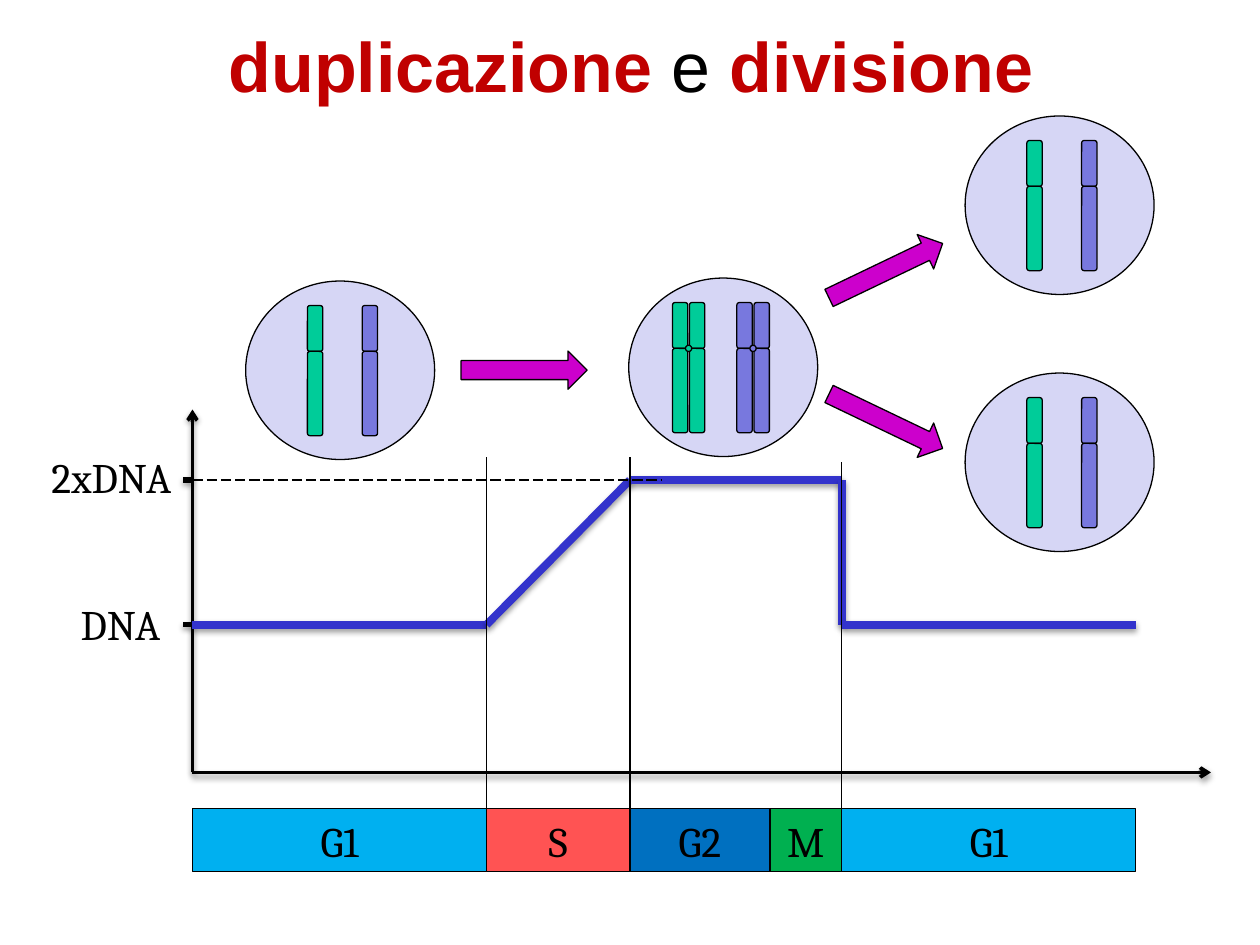
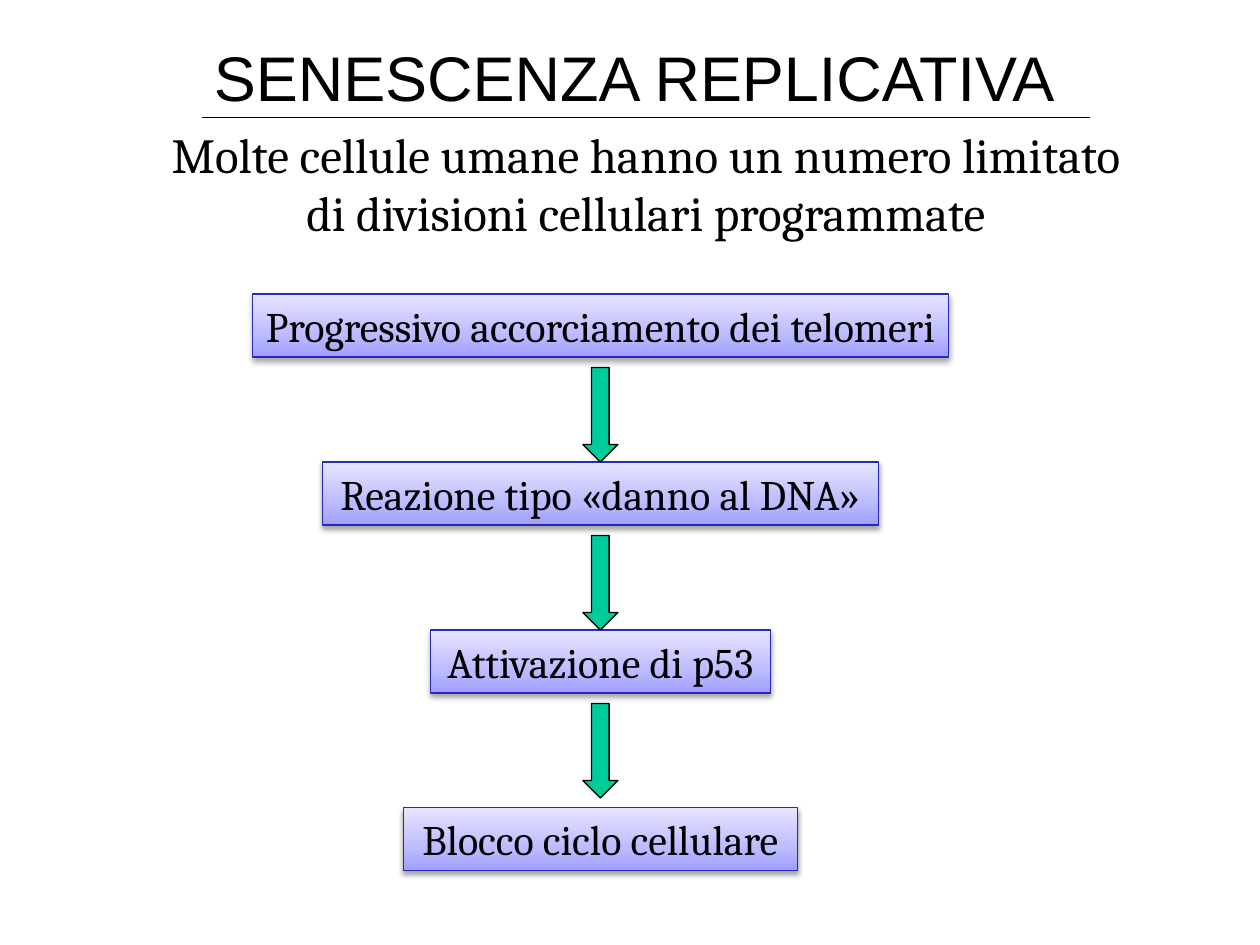
from dataclasses import dataclass
from itertools import pairwise

from pptx import Presentation
from pptx.dml.color import RGBColor as RGB
from pptx.enum.dml import MSO_LINE
from pptx.enum.shapes import MSO_CONNECTOR, MSO_SHAPE as SHP
from pptx.enum.text import MSO_ANCHOR, PP_ALIGN
from pptx.oxml import parse_xml
from pptx.oxml.ns import nsdecls, qn
from pptx.util import Pt


@dataclass(frozen=True)
class Theme:
    black: str = "000000"
    red: str = "C00000"
    curve: str = "3333CC"
    cell: str = "D6D6F5"
    green: str = "00CC99"
    violet: str = "7878DE"
    magenta: str = "CC00CC"
    g1: str = "00B0F0"
    s: str = "FF5353"
    g2: str = "0070C0"
    m: str = "00B050"
    box_line: str = "2929B8"
    box_stops: tuple = ((0, "9F9FFF"), (35, "BBBBFF"), (100, "E5E5FF"))
    head: str = "Arial"
    body: str = "Cambria"
    big: int = 40
    title: int = 36
    lead: int = 28
    label: int = 24
    hair: float = 0.75


T = Theme()
NS = nsdecls("a")
SHADOW = (f'<a:effectLst {NS}><a:outerShdw blurRad="40000" dist="22000" dir="5400000" '
          'rotWithShape="0"><a:srgbClr val="000000"><a:alpha val="36000"/></a:srgbClr>'
          '</a:outerShdw></a:effectLst>')
STOPS = "".join(f'<a:gs pos="{pos * 1000}"><a:srgbClr val="{c}"/></a:gs>' for pos, c in T.box_stops)
GRADIENT = (f'<a:gradFill {NS} rotWithShape="1"><a:gsLst>{STOPS}</a:gsLst>'
            '<a:lin ang="16200000" scaled="0"/></a:gradFill>')


def add_box(shapes, kind, box, fill=None, text=(), size=T.label, font=T.body, wrap=False):
    """Add a preset shape, or a text box if kind is None; text is (words, colour, bold) runs."""
    pos = [Pt(v) for v in box]
    sp = shapes.add_shape(kind, *pos) if kind else shapes.add_textbox(*pos)
    if kind:
        sp.line.width = Pt(T.hair)
        if fill == "gradient":
            sp.line.color.rgb = RGB.from_string(T.box_line)
            sp.fill.background()
            pr = sp.element.spPr
            pr.replace(pr.find(qn("a:noFill")), parse_xml(GRADIENT))
            pr.append(parse_xml(SHADOW))
        else:
            sp.line.color.rgb = RGB.from_string(T.black)
            sp.fill.solid()
            sp.fill.fore_color.rgb = RGB.from_string(fill)
            sp.shadow.inherit = False
    if text:
        tf = sp.text_frame
        for name, value in {"word_wrap": wrap, "vertical_anchor": MSO_ANCHOR.MIDDLE}.items():
            setattr(tf, name, value)
        p = tf.paragraphs[0]
        p.alignment = PP_ALIGN.CENTER
        for words, color, bold in text:
            r = p.add_run()
            r.text = words
            for name, value in {"name": font, "size": Pt(size), "bold": bold}.items():
                setattr(r.font, name, value)
            r.font.color.rgb = RGB.from_string(color)
    return sp


def add_line(shapes, start, end, width=T.hair, color=T.black, shadow=False, arrow=False, dash=None):
    """Add a straight line with an optional shadow, arrowhead and dash."""
    ln = shapes.add_connector(MSO_CONNECTOR.STRAIGHT, *[Pt(v) for v in (*start, *end)])
    ln.line.width = Pt(width)
    ln.line.color.rgb = RGB.from_string(color)
    if dash:
        ln.line.dash_style = dash
    pr = ln.element.spPr
    if arrow:
        pr.find(qn("a:ln")).append(parse_xml(f'<a:tailEnd {NS} type="arrow"/>'))
    pr.append(parse_xml(SHADOW if shadow else f"<a:effectLst {NS}/>"))


prs = Presentation()
prs.slide_width, prs.slide_height = Pt(720), Pt(540)
blank = prs.slide_layouts[6]

# Slide 1: DNA content through the cell cycle
shapes = prs.slides.add_slide(blank).shapes
axis_x, axis_y = 110, 441.4
dna, double_dna = 357, 274.3

# Axes and level labels
for end in ((axis_x, 234), (692, axis_y)):
    add_line(shapes, (axis_x, axis_y), end, 2, shadow=True, arrow=True)
for y, words, left, top, width in ((dna, "DNA", 35.3, 338.4, 67),
                                   (double_dna, "2xDNA", 18, 254.2, 91.4)):
    add_line(shapes, (axis_x, y), (104.4, y), 3, shadow=True)
    add_box(shapes, None, (left, top, width, 36), text=[(words, T.black, False)])

# Phase band
phases = (("G1", 168, T.g1), ("S", 82, T.s), ("G2", 80, T.g2), ("M", 41, T.m), ("G1", 168, T.g1))
band_top = 462.2
edges = [axis_x]
for name, width, color in phases:
    add_box(shapes, SHP.RECTANGLE, (edges[-1], band_top, width, 36), color, [(name, T.black, False)])
    edges.append(edges[-1] + width)
s_start, s_end, m_end = edges[1], edges[2], edges[4]

# DNA curve
curve = ((axis_x, dna), (s_start, dna), (s_end, double_dna),
         (m_end, double_dna), (m_end, dna), (edges[-1], dna))
for start, end in pairwise(curve):
    add_line(shapes, start, end, 4.5, T.curve, shadow=True)

# Cells: (left, top, duplicated)
for left, top, duplicated in ((140.4, 160.6, False), (359.3, 158.9, True),
                              (551.5, 66.3, False), (551.5, 213.2, False)):
    cell = shapes.add_group_shape().shapes
    add_box(cell, SHP.OVAL, (left, top, 108, 102), T.cell)
    if duplicated:
        chromosomes = ((T.green, (25, 34.7)), (T.violet, (61.8, 71.6)))
    else:
        chromosomes = ((T.green, (35.3,)), (T.violet, (66.6,)))
    for color, rods in chromosomes:
        for x in rods:
            for y, height in ((14, 26.2), (40.2, 48.2)):
                add_box(cell, SHP.ROUNDED_RECTANGLE, (left + x, top + y, 8.8, height), color)
        if duplicated:
            add_box(cell, SHP.OVAL, (left + rods[0] + 7.4, top + 38.4, 3.6, 3.6), color)

# Arrows between cells
for left, top, angle in ((263.5, 200.6, 0), (470.2, 143.8, -25.6), (470.2, 229.8, 25.6)):
    sp = add_box(shapes, SHP.RIGHT_ARROW, (left, top, 72, 21.8), T.magenta)
    sp.rotation = angle

# Guides
for x, top, bottom in ((s_start, 261, band_top), (s_end, 261, band_top), (m_end, 264, 465)):
    add_line(shapes, (x, bottom), (x, top))
add_line(shapes, (axis_x, double_dna), (378, double_dna), dash=MSO_LINE.LONG_DASH)

# Title
add_box(shapes, None, (121, 9, 479, 55.4), size=T.big, font=T.head,
        text=[("duplicazione ", T.red, True), ("e ", T.black, False), ("divisione", T.red, True)])

# Slide 2: replicative senescence
shapes = prs.slides.add_slide(blank).shapes
add_box(shapes, None, (108.6, 18, 508, 51), size=T.title, font=T.head,
        text=[("SENESCENZA REPLICATIVA", T.black, False)])
add_line(shapes, (115.2, 67), (622.8, 67))
add_box(shapes, None, (90, 67, 558, 75), size=T.lead, wrap=True,
        text=[("Molte cellule umane hanno un numero limitato di divisioni cellulari programmate",
               T.black, False)])

# Chain of events
mid = 343.1
steps = (("Progressivo accorciamento dei telomeri", 168, 398),
         ("Reazione tipo «danno al DNA»", 264, 317.6),
         ("Attivazione di p53", 360, 194.4),
         ("Blocco ciclo cellulare", 461.5, 225.4))
for words, top, width in steps:
    add_box(shapes, SHP.RECTANGLE, (mid - width / 2, top, width, 36), "gradient",
            [(words, T.black, False)])
for words, top, width in steps[:-1]:
    add_box(shapes, SHP.DOWN_ARROW, (mid - 10, top + 42, 20, 54), T.green)

prs.save("out.pptx")
